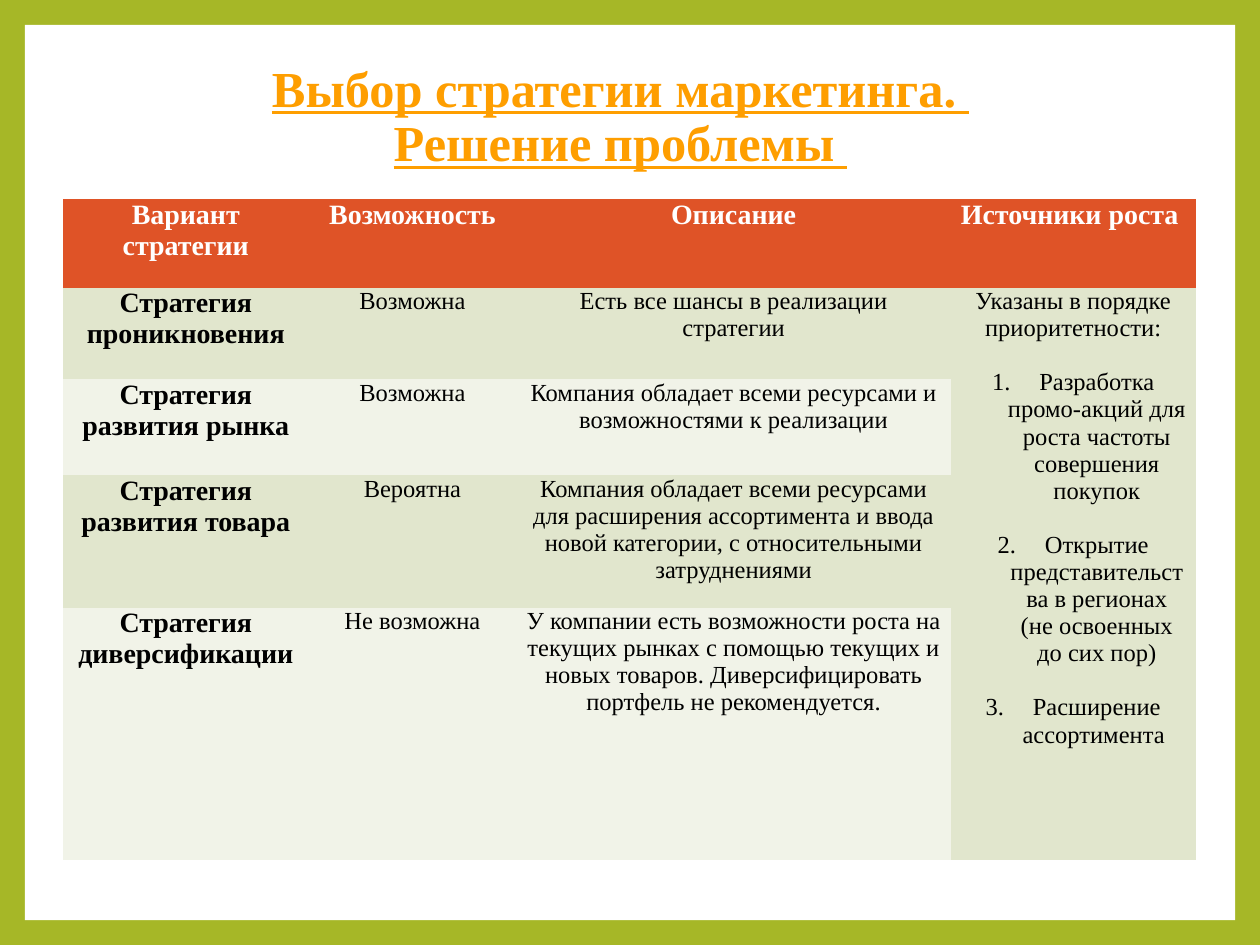
from lxml import etree
from pptx import Presentation
from pptx import util as u
from pptx.dml import color
from pptx.enum import shapes, text
from pptx.oxml import ns

HEADINGS = ["Вариант стратегии", "Возможность", "Описание", "Источники роста "]
STRATEGIES = [
    ("Стратегия проникновения", "Возможна", "Есть все шансы в реализации стратегии"),
    ("Стратегия развития рынка", "Возможна",
     "Компания обладает всеми ресурсами и возможностями к реализации"),
    ("Стратегия развития товара", "Вероятна",
     "Компания обладает всеми ресурсами для расширения ассортимента и ввода "
     "новой категории, с относительными затруднениями"),
    ("Стратегия диверсификации", "Не возможна",
     "У компании есть возможности роста на текущих рынках с помощью текущих и "
     "новых товаров. Диверсифицировать портфель не рекомендуется."),
]
GROWTH_INTRO = "Указаны в порядке приоритетности:"
GROWTH_SOURCES = [
    "Разработка промо-акций для роста частоты совершения покупок",
    "Открытие представительства в регионах (не освоенных до сих пор)",
    "Расширение ассортимента ",
]
COLUMN_WIDTHS = [4.95, 4.19, 8.76, 4.93]
ROW_HEIGHTS = [1.78, 1.85, 1.93, 2.67, 5.08]
BANDS = ["E1E6CD", "F1F3E8"]
PLAIN_TABLE = "{2D5ABB26-0587-4C30-8999-92F81FD0307C}"


def paint(target, hex_color):
    if hasattr(target, "solid"):
        target.solid()
        target = target.fore_color
    target.rgb = color.RGBColor.from_string(hex_color)


class StrategySlide:
    """Holds the text style and the current slide, and adds elements to it."""

    font = "Times New Roman"

    def __init__(self, slide):
        self.slide = slide

    def background(self, hex_color):
        paint(self.slide.background.fill, hex_color)

    def panel(self, left, top, width, height, hex_color):
        panel = self.slide.shapes.add_shape(
            shapes.MSO_SHAPE.RECTANGLE, u.Cm(left), u.Cm(top), u.Cm(width), u.Cm(height))
        panel.shadow.inherit = False
        paint(panel.fill, hex_color)
        panel.line.fill.background()

    def run(self, paragraph, words, size, hex_color="000000", bold=False, underline=None):
        paragraph.alignment = text.PP_ALIGN.CENTER
        run = paragraph.add_run()
        run.text = words
        run.font.name = self.font
        run.font.size = u.Pt(size)
        run.font.bold = bold
        run.font.underline = underline
        paint(run.font.color, hex_color)

    def title(self, lines, left, top, width, height):
        frame = self.slide.shapes.add_textbox(
            u.Cm(left), u.Cm(top), u.Cm(width), u.Cm(height)).text_frame
        frame.word_wrap = True
        frame.vertical_anchor = text.MSO_ANCHOR.MIDDLE
        paragraph = frame.paragraphs[0]
        paragraph.line_spacing = 0.9
        for index, line in enumerate(lines):
            if index:
                paragraph.add_line_break()
            self.run(paragraph, line, 28.8, "FE9E00", bold=True, underline=True)

    def table(self, left, top, widths, heights):
        table = self.slide.shapes.add_table(
            len(heights), len(widths), u.Cm(left), u.Cm(top),
            u.Cm(sum(widths)), u.Cm(sum(heights))).table
        table._tbl.tblPr.find(ns.qn("a:tableStyleId")).text = PLAIN_TABLE
        for column, width in zip(table.columns, widths):
            column.width = u.Cm(width)
        for row, height in zip(table.rows, heights):
            row.height = u.Cm(height)
        return table

    def cell(self, cell, words, fill, size=14, hex_color="000000", bold=False):
        cell.margin_left = cell.margin_right = u.Cm(0.19)
        cell.margin_top = cell.margin_bottom = 0
        paint(cell.fill, fill)
        self.run(cell.text_frame.paragraphs[0], words, size, hex_color, bold)

    def numbered(self, frame, items, gap):
        for item in items:
            frame.paragraphs[-1].space_after = u.Pt(gap)
            paragraph = frame.add_paragraph()
            self.run(paragraph, item, 14)
            properties = paragraph._p.get_or_add_pPr()
            properties.set("marL", str(u.Cm(0.95)))
            properties.set("indent", str(-u.Cm(0.95)))
            etree.SubElement(properties, ns.qn("a:buFont"), typeface="+mj-lt")
            etree.SubElement(properties, ns.qn("a:buAutoNum"), type="arabicPeriod")


def main():
    deck = Presentation()
    deck.slide_width, deck.slide_height = u.Cm(25.4), u.Cm(19.05)
    page = StrategySlide(deck.slides.add_slide(deck.slide_layouts[6]))
    page.background("A6B727")
    page.panel(0.5, 0.5, 24.4, 18.05, "FFFFFF")
    page.title(["Выбор стратегии маркетинга. ", "Решение проблемы "], 1.27, 1.07, 22.48, 2.62)

    strategies = page.table(1.27, 4.02, COLUMN_WIDTHS, ROW_HEIGHTS)
    for column, heading in enumerate(HEADINGS):
        page.cell(strategies.cell(0, column), heading, "DF5327", 16, "FFFFFF", bold=True)
    for row, (name, chance, description) in enumerate(STRATEGIES, start=1):
        band = BANDS[(row - 1) % 2]
        page.cell(strategies.cell(row, 0), name, band, 16, bold=True)
        page.cell(strategies.cell(row, 1), chance, band)
        page.cell(strategies.cell(row, 2), description, band)

    growth = strategies.cell(1, 3)
    growth.merge(strategies.cell(len(STRATEGIES), 3))
    page.cell(growth, GROWTH_INTRO, BANDS[0])
    page.numbered(growth.text_frame, GROWTH_SOURCES, 15.5)
    deck.save("out.pptx")


if __name__ == "__main__":
    main()
